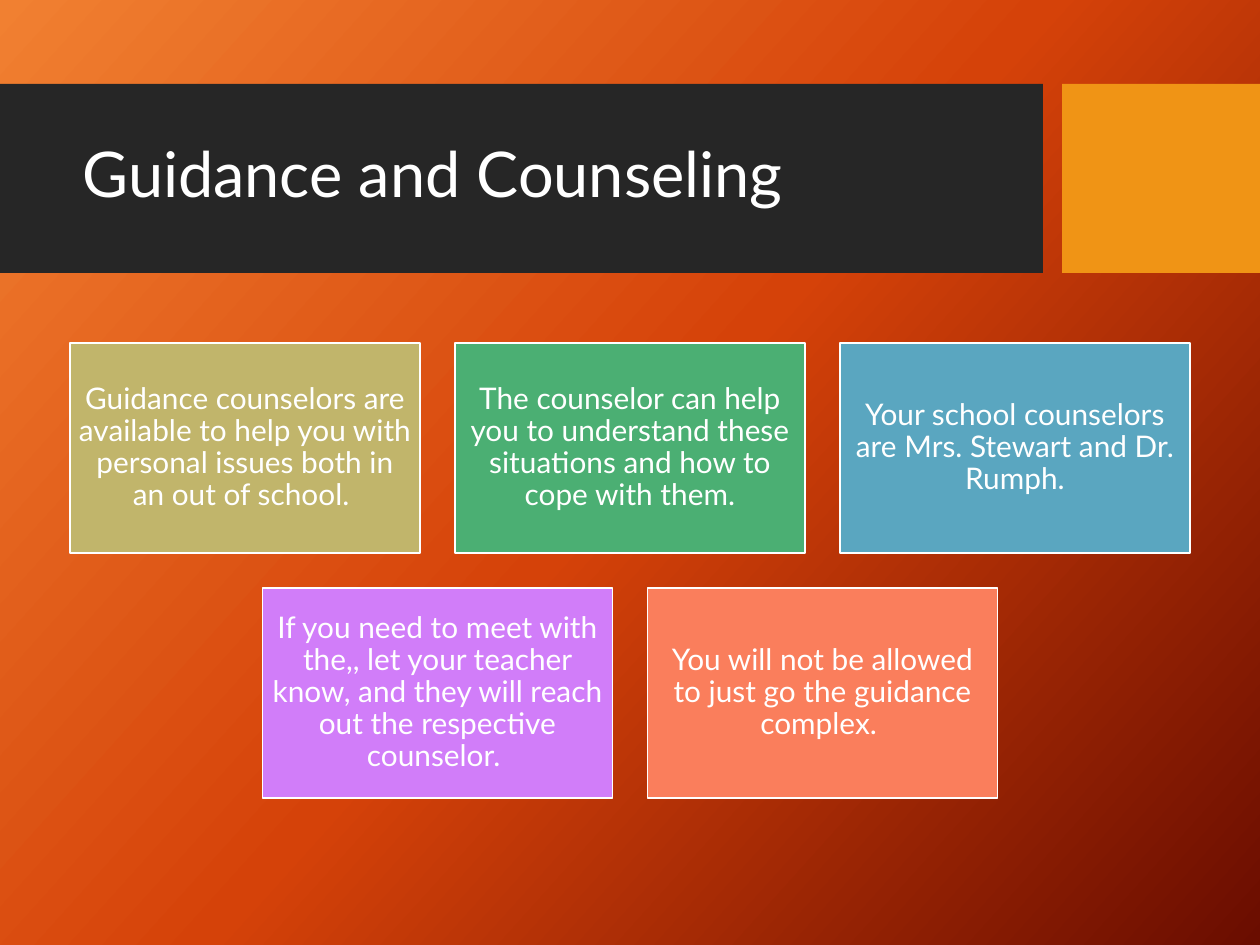
from copy import deepcopy

from pptx import Presentation
from pptx.dml.color import RGBColor
from pptx.enum.shapes import MSO_SHAPE as Shape
from pptx.enum.text import MSO_ANCHOR as Anchor, PP_ALIGN as Align
from pptx.util import Pt

FONT = "Lato"
WHITE = RGBColor(0xFF, 0xFF, 0xFF)
DARK = RGBColor(0x26, 0x26, 0x26)
AMBER = RGBColor(0xF0, 0x94, 0x15)
SAND = RGBColor(0xC1, 0xB5, 0x6B)
GREEN = RGBColor(0x4B, 0xAF, 0x73)
BLUE = RGBColor(0x5A, 0xA6, 0xC0)
VIOLET = RGBColor(0xD1, 0x7D, 0xF9)
CORAL = RGBColor(0xFA, 0x7E, 0x5C)
GLOW = [
    (0, RGBColor(0xF1, 0x80, 0x31)),
    (0.5, RGBColor(0xD5, 0x42, 0x09)),
    (1, RGBColor(0x6A, 0x0D, 0x00)),
]

TITLE = "Guidance and Counseling"
ROWS = [
    [
        ("Guidance counselors are available to help you with personal "
         "issues both in an out of school. ", SAND),
        ("The counselor can help you to understand these situations and "
         "how to cope with them.", GREEN),
        ("Your school counselors are Mrs. Stewart and Dr. Rumph.", BLUE),
    ],
    [
        ("If you need to meet with the,, let your teacher know, and they "
         "will reach out the respective counselor. ", VIOLET),
        ("You will not be allowed to just go the guidance complex. ", CORAL),
    ],
]


def paint_back(slide):
    """Fill the background with the three-stop diagonal gradient."""
    fill = slide.background.fill
    fill.gradient()
    fill.gradient_angle = 360 - 42
    stops = slide.background.element.xpath(".//a:gsLst")[0]
    stops.append(deepcopy(stops[-1]))
    for stop, (pos, color) in zip(fill.gradient_stops, GLOW):
        stop.position = pos
        stop.color.rgb = color


def add_rect(slide, left, top, width, height, color):
    rect = slide.shapes.add_shape(
        Shape.RECTANGLE, Pt(left), Pt(top), Pt(width), Pt(height))
    rect.shadow.inherit = False
    rect.fill.solid()
    rect.fill.fore_color.rgb = color
    rect.line.fill.background()
    return rect


def set_text(shape, text, size, align):
    frame = shape.text_frame
    frame.text = text
    frame.word_wrap = True
    frame.vertical_anchor = Anchor.MIDDLE
    para = frame.paragraphs[0]
    para.alignment = align
    para.line_spacing = 0.9
    font = para.runs[0].font
    font.name = FONT
    font.size = Pt(size)
    font.color.rgb = WHITE


def add_head(slide, left, top, width, height):
    """Place the dark title band, its amber end block and the title."""
    band, gap = 596, 11
    block = left + band + gap
    title = slide.shapes.title
    for x, wide, color in [(left, band, DARK),
                           (block, left + width - block, AMBER)]:
        bar = add_rect(slide, x, top, wide, height, color)
        title.element.addprevious(bar.element)
    title.left, title.top = Pt(left + 40), Pt(top + 11)
    title.width, title.height = Pt(568), Pt(85)
    set_text(title, TITLE, 36, Align.LEFT)


def add_cards(slide, left, top, width):
    """Place the cards in rows, each row centred in the width."""
    wide, high, gap, pad = 200, 120, 20, Pt(5)
    for i, row in enumerate(ROWS):
        span = len(row) * (wide + gap) - gap
        start = left + (width - span) / 2
        for j, (text, color) in enumerate(row):
            card = add_rect(slide, start + j * (wide + gap),
                            top + i * (high + gap), wide, high, color)
            card.line.color.rgb = WHITE
            card.line.width = Pt(1)
            frame = card.text_frame
            frame.margin_left = frame.margin_right = pad
            frame.margin_top = frame.margin_bottom = pad
            set_text(card, text, 17, Align.CENTER)


def main():
    deck = Presentation()
    deck.slide_width, deck.slide_height = Pt(720), Pt(540)
    slide = deck.slides.add_slide(deck.slide_layouts[5])
    paint_back(slide)
    add_head(slide, 0, 48, 720, 108)
    add_cards(slide, 40, 196, 640)
    deck.save("out.pptx")


if __name__ == "__main__":
    main()
